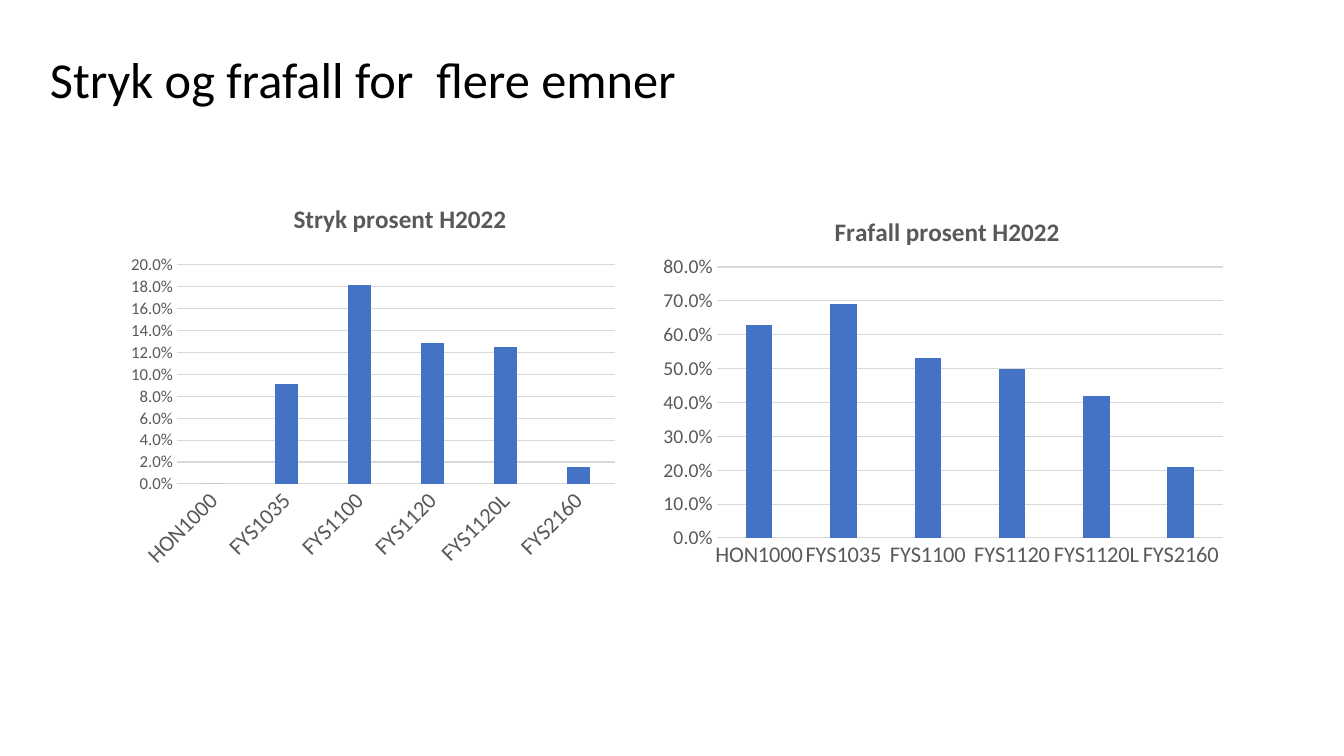
import pptx
import pptx.chart.data
import pptx.dml.color
import pptx.enum.chart
import pptx.enum.text
import pptx.oxml
import pptx.oxml.ns
import pptx.util

SCALE = 914400 / 100.8  # EMU in one px
FONT = "Calibri"
HUES = {"ink": "000000", "label": "595959", "grid": "D9D9D9", "bar": "4472C4"}
NAMES = ["HON1000", "FYS1035", "FYS1100", "FYS1120", "FYS1120L", "FYS2160"]
qn = pptx.oxml.ns.qn

# Boxes are left, top, width, height in px; turn is the label angle (-1000 = automatic)
FAIL = {"title": "Stryk prosent H2022", "vals": [0, 0.091, 0.182, 0.129, 0.125, 0.015],
        "top": 0.2, "step": 0.02, "size": 12, "turn": -45,
        "head": (289, 197), "plot": (177, 265, 438, 219)}
DROP = {"title": "Frafall prosent H2022", "vals": [0.63, 0.69, 0.53, 0.5, 0.42, 0.21],
        "top": 0.8, "step": 0.1, "size": 14, "turn": -1000,
        "head": (830, 210), "plot": (717, 267, 506, 271)}


def emu(px):
    return pptx.util.Emu(round(px * SCALE))


def tint(hue):
    return pptx.dml.color.RGBColor.from_string(HUES[hue])


def apply(item, look):
    for key, val in look.items():
        setattr(item, key, val)


def style(font, size, hue, bold=False):
    apply(font, {"name": FONT, "size": pptx.util.Pt(size), "bold": bold})
    font.color.rgb = tint(hue)


def rule(line):
    line.color.rgb = tint("grid")
    line.width = pptx.util.Pt(0.75)


def pin(node, spot, box, index, inner=False):
    """Fix a chart part at a spot given in slide px."""
    old = node.find(qn("c:layout"))
    if old is not None:
        node.remove(old)
    x, y, w, h = box
    parts = {"xMode": "edge", "yMode": "edge",
             "x": round((spot[0] - x) / w, 4), "y": round((spot[1] - y) / h, 4)}
    if inner:
        parts = {"layoutTarget": "inner", **parts,
                 "w": round(spot[2] / w, 4), "h": round(spot[3] / h, 4)}
    body = "".join(f'<c:{tag} val="{val}"/>' for tag, val in parts.items())
    node.insert(index, pptx.oxml.parse_xml(
        f'<c:layout {pptx.oxml.ns.nsdecls("c")}><c:manualLayout>{body}</c:manualLayout></c:layout>'))


def heading(slide, box, text):
    frame = slide.shapes.add_textbox(*map(emu, box)).text_frame
    apply(frame, {"word_wrap": False, "auto_size": pptx.enum.text.MSO_AUTO_SIZE.SHAPE_TO_FIT_TEXT})
    run = frame.paragraphs[0].add_run()
    run.text = text
    style(run.font, 36, "ink")


def columns(slide, box, info):
    data = pptx.chart.data.CategoryChartData(number_format="0.0%")
    data.categories = NAMES
    data.add_series("Series 1", info["vals"])
    kind = pptx.enum.chart.XL_CHART_TYPE.COLUMN_CLUSTERED
    chart = slide.shapes.add_chart(kind, *map(emu, box), data).chart
    style(chart.font, info["size"], "ink")
    chart.has_legend = False

    # Title
    frame = chart.chart_title.text_frame
    frame.text = info["title"]
    style(frame.paragraphs[0].runs[0].font, 18, "label", True)

    # Bars
    plot = chart.plots[0]
    apply(plot, {"gap_width": 219, "overlap": -27, "vary_by_categories": False})
    fill = plot.series[0].format.fill
    fill.solid()
    fill.fore_color.rgb = tint("bar")

    # Axes
    cat, val = chart.category_axis, chart.value_axis
    none = pptx.enum.chart.XL_TICK_MARK.NONE
    for axis, size in ((cat, 16), (val, info["size"])):
        apply(axis, {"major_tick_mark": none, "minor_tick_mark": none})
        style(axis.tick_labels.font, size, "label")
    rule(cat.format.line)
    apply(val, {"minimum_scale": 0, "maximum_scale": info["top"],
                "major_unit": info["step"], "has_major_gridlines": True})
    apply(val.tick_labels, {"number_format": "0.0%", "number_format_is_linked": False})
    val.format.line.fill.background()
    rule(val.major_gridlines.format.line)

    # Label angle and fixed places
    root = chart.element
    turn = root.find(".//" + qn("c:catAx")).find(qn("c:txPr")).find(qn("a:bodyPr"))
    turn.set("rot", str(info["turn"] * 60000))
    pin(root.find(".//" + qn("c:title")), info["head"], box, 1)
    pin(root.find(".//" + qn("c:plotArea")), info["plot"], box, 0, True)


def main():
    deck = pptx.Presentation()
    apply(deck, {"slide_width": emu(1344), "slide_height": emu(756)})
    slide = deck.slides.add_slide(deck.slide_layouts[6])
    heading(slide, (40, 43, 652, 72), "Stryk og frafall for  flere emner")
    columns(slide, (121, 190, 504, 388), FAIL)
    columns(slide, (651, 190, 583, 388), DROP)
    deck.save("out.pptx")


if __name__ == "__main__":
    main()
